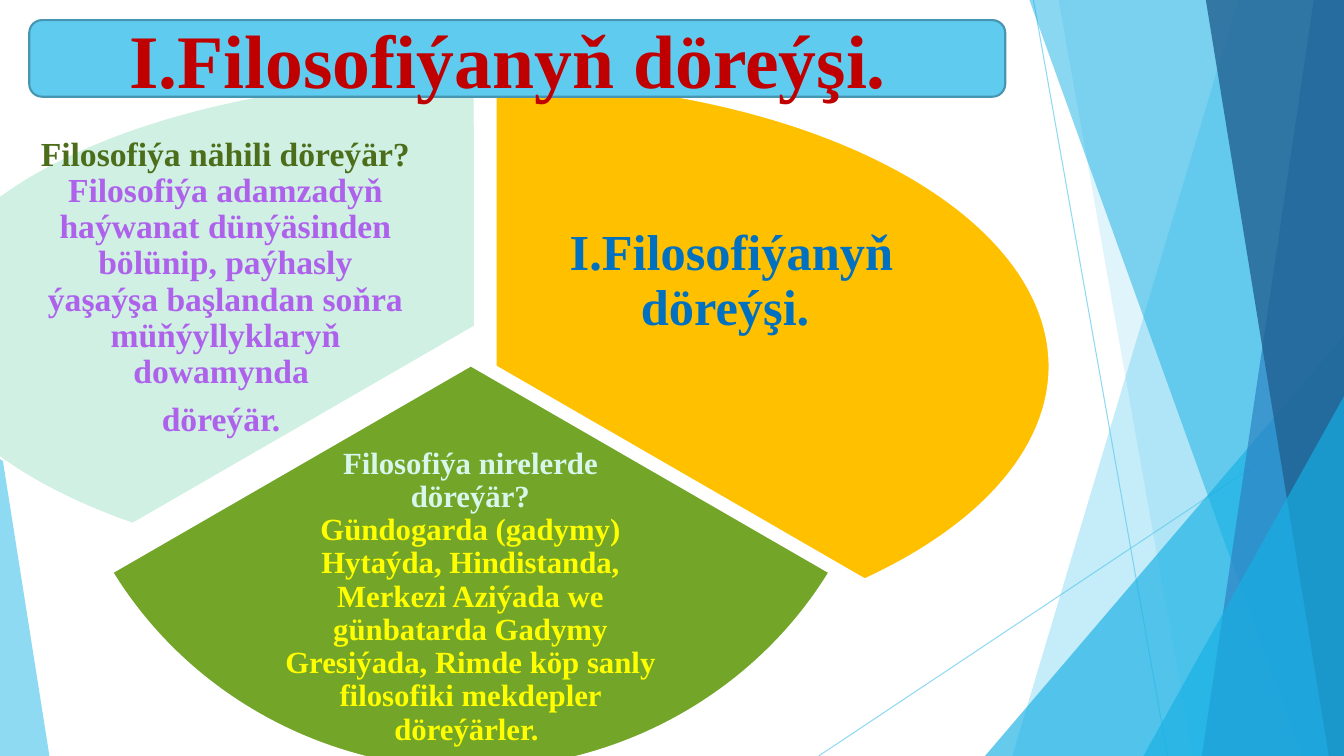
from lxml import etree
from pptx import Presentation
from pptx.dml.color import RGBColor
from pptx.enum.shapes import MSO_CONNECTOR, MSO_SHAPE
from pptx.enum.text import MSO_ANCHOR, PP_ALIGN
from pptx.oxml.ns import qn
from pptx.util import Inches, Pt

STRAIGHT = MSO_CONNECTOR.STRAIGHT
PIE = MSO_SHAPE.PIE
TRIANGLE = MSO_SHAPE.ISOSCELES_TRIANGLE
ROUNDED = MSO_SHAPE.ROUNDED_RECTANGLE
MIDDLE = MSO_ANCHOR.MIDDLE
TOP = MSO_ANCHOR.TOP
CENTER = PP_ALIGN.CENTER

FONT = "Times New Roman"
HEADING = "I.Filosofiýanyň döreýşi. "
SLIDE_BOX = (0, 0, 13.33, 7.5)

# Ribbons: left edge at the top, left edge at the bottom, colour, opacity
RIBBONS = [
    (12.28, 10.04, "5FCBEF", 36),
    (10.5, 11.83, "5FCBEF", 20),
    (10.21, 12.91, "17B0E4", 50),
    (13.03, 11.92, "2E83C3", 70),
    (11.96, 13.18, "226292", 80),
]
RIBBONS_BEHIND_LARGE_CORNER = 2
RIGHT, LEFT = 1, 0

# Angles are in units of 100000/60000 degree: 270°, 30° and 150°
UP, LOWER_RIGHT, LOWER_LEFT = 162, 18, 90


def paint(fill, color, opacity=100):
    fill.solid()
    fill.fore_color.rgb = RGBColor.from_string(color)
    if opacity < 100:
        solid = fill._xPr.find(qn("a:solidFill"))
        etree.SubElement(solid[0], qn("a:alpha"), val=str(opacity * 1000))


def add_preset(slide, kind, box, color, opacity=100, outline=None):
    shape = slide.shapes.add_shape(kind, *(Inches(v) for v in box))
    shape.shadow.inherit = False
    paint(shape.fill, color, opacity)
    if outline:
        paint(shape.line.fill, outline)
        shape.line.width = Pt(1.5)
    else:
        shape.line.fill.background()
    return shape


def add_thin_line(slide, start, end):
    line = slide.shapes.add_connector(
        STRAIGHT, *(Inches(v) for v in (*start, *end)))
    paint(line.line.fill, "5FCBEF", 70)
    line.line.width = Pt(0.75)
    etree.SubElement(line._element.spPr, qn("a:effectLst"))


def add_ribbon(slide, box, top_x, bottom_x, color, opacity):
    """Draw a band that reaches from a slanted edge to the right of the box."""
    left, top, width, height = box
    right, bottom = left + width, top + height
    corners = [(right, top), (right, bottom), (left + bottom_x, bottom)]
    builder = slide.shapes.build_freeform(
        Inches(left + top_x), Inches(top), scale=1.0)
    builder.add_line_segments(
        [(Inches(x), Inches(y)) for x, y in corners], close=True)
    ribbon = builder.convert_to_shape()
    ribbon.shadow.inherit = False
    paint(ribbon.fill, color, opacity)
    ribbon.line.fill.background()


def add_corner(slide, box, side, width, height, color, opacity):
    """Draw a right triangle in a bottom corner of the box."""
    left = box[0] + side * (box[2] - width)
    corner = add_preset(slide, TRIANGLE,
                        (left, box[1] + box[3] - height, width, height),
                        color, opacity)
    corner.adjustments[0] = side


def add_backdrop(slide, box):
    left, top, width, height = box
    add_thin_line(slide, (left + 10.25, top), (left + 11.58, top + height))
    add_thin_line(slide, (left + width, top + 4.03), (left + 8.12, top + height))
    for index, ribbon in enumerate(RIBBONS):
        if index == RIBBONS_BEHIND_LARGE_CORNER:
            add_corner(slide, box, RIGHT, 3.56, 4.17, "17B0E4", 66)
        add_ribbon(slide, box, *ribbon)
    add_corner(slide, box, RIGHT, 1.99, 3.57, "17B0E4", 66)
    add_corner(slide, box, LEFT, 0.49, 3.11, "5FCBEF", 70)


def write_runs(paragraph, runs, size):
    """Add centred bold runs, each starting on a line of its own."""
    paragraph.alignment = CENTER
    for index, (words, color) in enumerate(runs):
        if index:
            paragraph.add_line_break()
        run = paragraph.add_run()
        run.text = words
        run.font.name = FONT
        run.font.size = Pt(size)
        run.font.bold = True
        run.font.color.rgb = RGBColor.from_string(color)


def add_sector(slide, box, angles, color):
    sector = add_preset(slide, PIE, box, color, outline="FFFFFF")
    sector.adjustments[0], sector.adjustments[1] = angles


def add_sector_text(slide, box, paragraphs, size, inset, anchor=MIDDLE):
    frame = slide.shapes.add_textbox(*(Inches(v) for v in box)).text_frame
    frame.word_wrap = True
    frame.vertical_anchor = anchor
    frame.margin_left = frame.margin_right = Inches(inset)
    frame.margin_top = frame.margin_bottom = Inches(inset)
    for index, runs in enumerate(paragraphs):
        paragraph = frame.add_paragraph() if index else frame.paragraphs[0]
        paragraph.line_spacing = 0.9
        if index < len(paragraphs) - 1:
            paragraph.space_after = Pt(round(size * 0.35, 1))
        write_runs(paragraph, runs, size)


def add_title(slide, box):
    banner = add_preset(slide, ROUNDED, box, "5FCBEF", outline="4696B1")
    banner.text_frame.word_wrap = True
    banner.text_frame.vertical_anchor = MIDDLE
    write_runs(banner.text_frame.paragraphs[0], [(HEADING, "C00000")], 54)


def main():
    prs = Presentation()
    prs.slide_width, prs.slide_height = (Inches(v) for v in SLIDE_BOX[2:])
    slide = prs.slides.add_slide(prs.slide_layouts[6])

    add_backdrop(slide, SLIDE_BOX)

    add_sector(slide, (-0.58, 0.8, 10.99, 5.67), (UP, LOWER_RIGHT), "FFC000")
    add_sector_text(slide, (5.39, 1.85, 3.73, 1.89),
                    [[(HEADING, "0070C0")]], 36, 0.05)

    add_sector(slide, (0.53, -0.39, 8.28, 8.03), (LOWER_RIGHT, LOWER_LEFT),
               "72A528")
    where = [
        ("Filosofiýa nirelerde döreýär?", "D9F6EC"),
        ("Gündogarda (gadymy) Hytaýda, Hindistanda, Merkezi Aziýada we "
         "günbatarda Gadymy Gresiýada, Rimde köp sanly filosofiki mekdepler "
         "döreýärler. ", "FFFF00"),
    ]
    add_sector_text(slide, (2.79, 4.68, 3.75, 2.49), [where], 22, 0.03)

    add_sector(slide, (-0.82, 0.76, 11.06, 4.96), (LOWER_LEFT, UP), "CFF0E3")
    how = [
        ("Filosofiýa nähili döreýär?", "4C6E1B"),
        ("Filosofiýa adamzadyň haýwanat dünýäsinden bölünip, paýhasly "
         "ýaşaýşa başlandan soňra müňýyllyklaryň dowamynda ", "AE62EC"),
    ]
    add_sector_text(slide, (0.36, 1.33, 3.75, 3.05),
                    [how, [("döreýär. ", "AE62EC")]], 24, 0.03, TOP)

    add_title(slide, (0.29, 0.2, 9.68, 0.76))
    prs.save("out.pptx")


if __name__ == "__main__":
    main()
